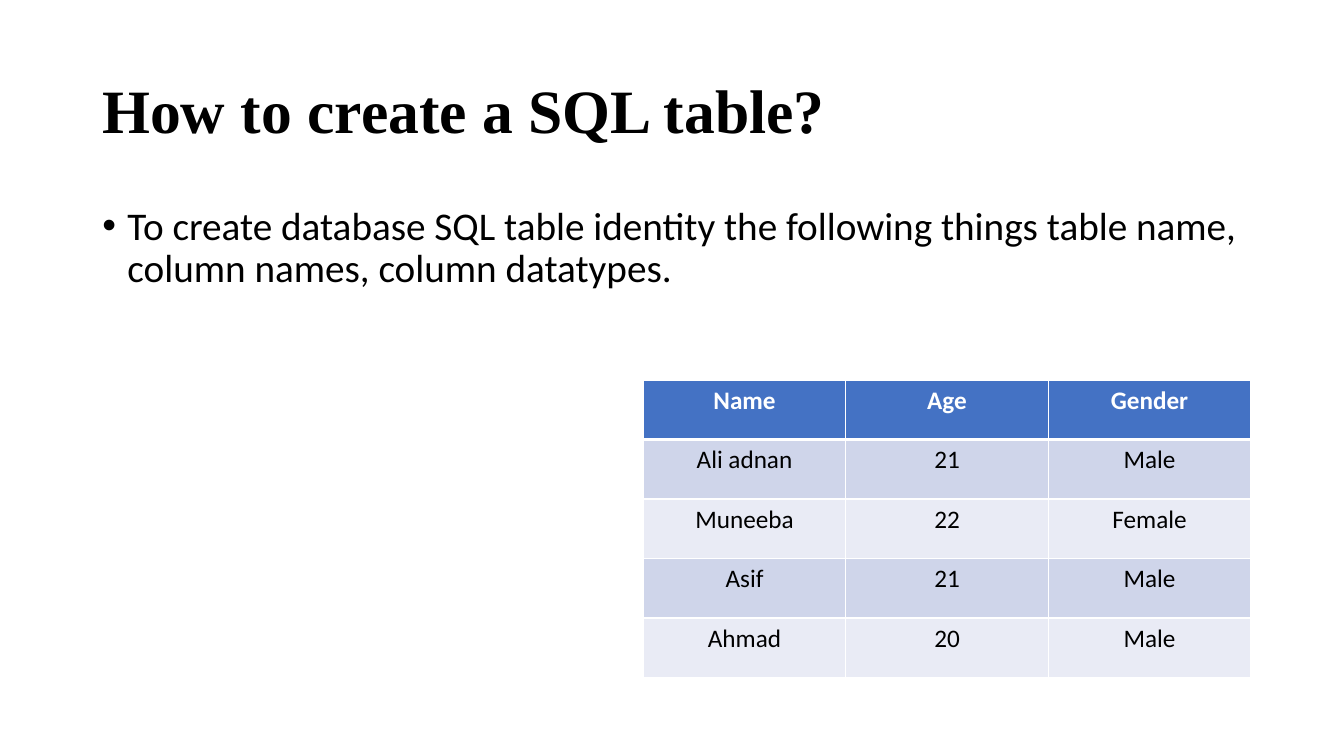
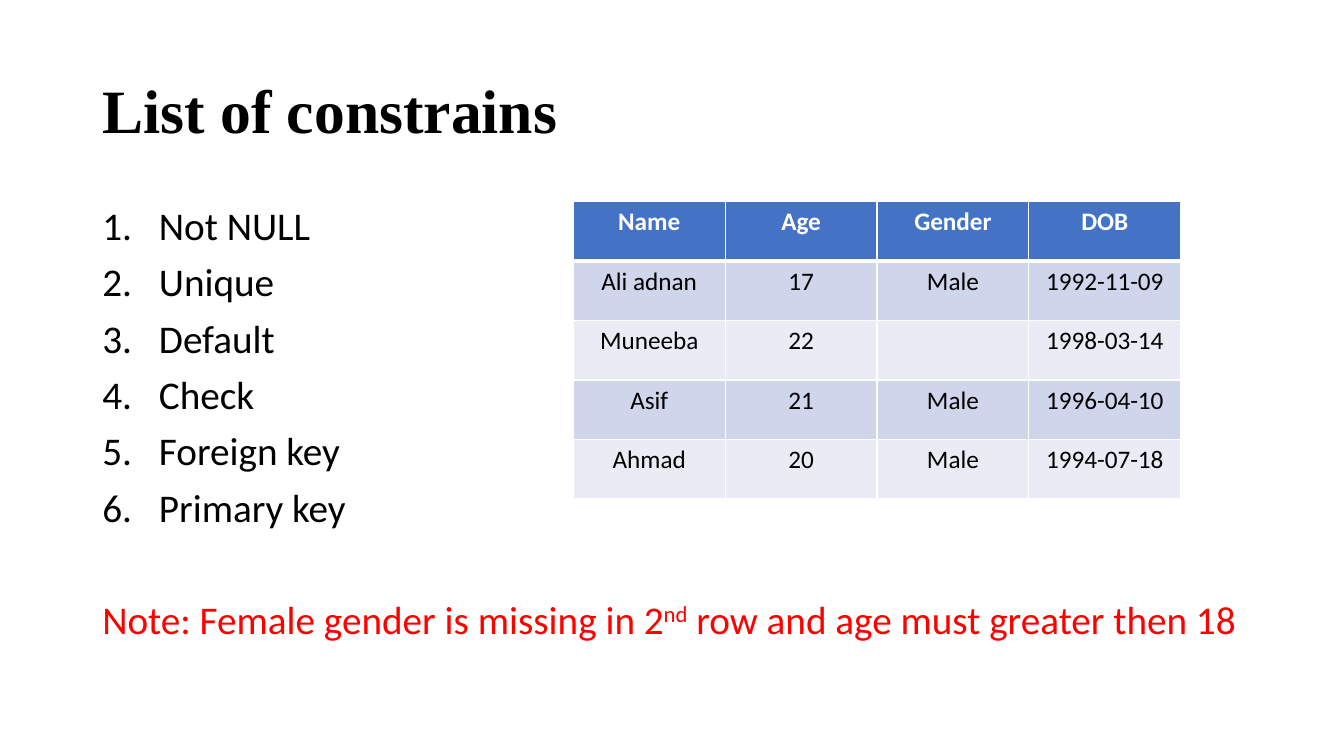
from lxml import etree
from pptx import Presentation
from pptx.dml.color import RGBColor
from pptx.enum.text import MSO_ANCHOR, PP_ALIGN
from pptx.oxml.ns import qn
from pptx.util import Pt

CENTER = PP_ALIGN.CENTER
TOP, MIDDLE = MSO_ANCHOR.TOP, MSO_ANCHOR.MIDDLE

BLACK, WHITE, RED = "000000", "FFFFFF", "FF0000"
HEADER_FILL = "4472C4"
BAND_FILLS = ("CFD5EA", "E9EBF5")
TITLE_FONT, BODY_FONT = "Times New Roman", "Calibri"

TITLE_BOX = (66, 28.8, 828, 104.4)
BODY_BOX = (66, 144, 828, 342)
TABLE_WIDTH, TABLE_HEIGHT = 434, 212.5

PEOPLE = [
    ("Name", "Age", "Gender"),
    ("Ali adnan", "21", "Male"),
    ("Muneeba", "22", "Female"),
    ("Asif", "21", "Male"),
    ("Ahmad", "20", "Male"),
]
PEOPLE_WITH_BIRTHS = [
    ("Name", "Age", "Gender", "DOB"),
    ("Ali adnan", "17", "Male", "1992-11-09"),
    ("Muneeba", "22", "", "1998-03-14"),
    ("Asif", "21", "Male", "1996-04-10"),
    ("Ahmad", "20", "Male", "1994-07-18"),
]
CONSTRAINTS = ("Not NULL", "Unique", "Default", "Check", "Foreign key", "Primary key")


def rgb(color):
    """Turn a hex string into a colour."""
    return RGBColor.from_string(color)


def write(para, text, size=28, font=BODY_FONT, color=BLACK, bold=False, baseline=0):
    """Add a formatted span of text to a paragraph."""
    span = para.add_run()
    span.text = text
    span.font.size = Pt(size)
    span.font.name = font
    span.font.bold = bold
    span.font.color.rgb = rgb(color)
    if baseline:
        span.font._element.set("baseline", str(baseline * 1000))


def add_text_frame(page, box, anchor=TOP):
    """Place a wrapping text box and return its text frame."""
    frame = page.shapes.add_textbox(*map(Pt, box)).text_frame
    frame.word_wrap = True
    frame.vertical_anchor = anchor
    return frame


def add_para(frame, space_before=10, first=False):
    """Return a spaced paragraph, reusing the empty first one when asked."""
    para = frame.paragraphs[0] if first else frame.add_paragraph()
    para.line_spacing = 0.9
    para.space_before = Pt(space_before)
    return para


def mark(para, indent, tag, **attributes):
    """Give a paragraph a hanging indent and a bullet or number."""
    properties = para._p.get_or_add_pPr()
    properties.set("marL", str(Pt(indent)))
    properties.set("indent", str(-Pt(indent)))
    etree.SubElement(properties, qn("a:buFont"), typeface="Arial" if tag == "a:buChar" else BODY_FONT)
    etree.SubElement(properties, qn(tag), **attributes)


def set_borders(cell, top, bottom):
    """Draw white borders around a cell, with the given top and bottom widths."""
    properties = cell._tc.get_or_add_tcPr()
    sides = (("a:lnL", 1), ("a:lnR", 1), ("a:lnT", top), ("a:lnB", bottom))
    for position, (tag, width) in enumerate(sides):
        line = etree.Element(qn(tag), w=str(Pt(width)))
        fill = etree.SubElement(line, qn("a:solidFill"))
        etree.SubElement(fill, qn("a:srgbClr"), val=WHITE)
        properties.insert(position, line)


def add_people_table(page, left, top, rows):
    """Place a banded table with equal columns and rows."""
    columns = len(rows[0])
    box = map(Pt, (left, top, TABLE_WIDTH, TABLE_HEIGHT))
    table = page.shapes.add_table(len(rows), columns, *box).table
    table.horz_banding = False
    for column in table.columns:
        column.width = Pt(round(TABLE_WIDTH / columns, 2))
    for row_index, values in enumerate(rows):
        table.rows[row_index].height = Pt(TABLE_HEIGHT / len(rows))
        header = row_index == 0
        for column_index, value in enumerate(values):
            cell = table.cell(row_index, column_index)
            cell.fill.solid()
            cell.fill.fore_color.rgb = rgb(HEADER_FILL if header else BAND_FILLS[(row_index - 1) % 2])
            set_borders(cell, top=3 if row_index == 1 else 1, bottom=3 if header else 1)
            para = cell.text_frame.paragraphs[0]
            para.alignment = CENTER
            if value:
                write(para, value, size=18, color=WHITE if header else BLACK, bold=header)


def add_page(deck, title):
    """Add a blank slide with the shared title style."""
    page = deck.slides.add_slide(deck.slide_layouts[6])
    para = add_para(add_text_frame(page, TITLE_BOX, MIDDLE), space_before=0, first=True)
    write(para, title, size=44, font=TITLE_FONT, bold=True)
    return page


def add_creation_body(page, box):
    """Place the bulleted explanation of table creation."""
    para = add_para(add_text_frame(page, box), first=True)
    mark(para, 18, "a:buChar", char="•")
    write(para, "To create database SQL table identity the following things "
                "table name, column names, column datatypes.")


def add_constraint_body(page, box):
    """Place the numbered constraints and the red note below them."""
    frame = add_text_frame(page, box)
    for index, name in enumerate(CONSTRAINTS):
        para = add_para(frame, first=index == 0)
        mark(para, 40.5, "a:buAutoNum", type="arabicPeriod")
        write(para, name)
    note = add_para(frame, space_before=50)
    write(note, "Note: Female gender is missing in 2", color=RED)
    write(note, "nd", color=RED, baseline=30)
    write(note, " row and age must greater then 18", color=RED)


def main():
    """Build and save the deck."""
    deck = Presentation()
    deck.slide_width, deck.slide_height = Pt(960), Pt(540)

    creation = add_page(deck, "How to create a SQL table?")
    add_creation_body(creation, BODY_BOX)
    add_people_table(creation, 459.5, 271.5, PEOPLE)

    constraints = add_page(deck, "List of constrains")
    add_constraint_body(constraints, BODY_BOX)
    add_people_table(constraints, 409.5, 144, PEOPLE_WITH_BIRTHS)

    deck.save("out.pptx")


if __name__ == "__main__":
    main()
